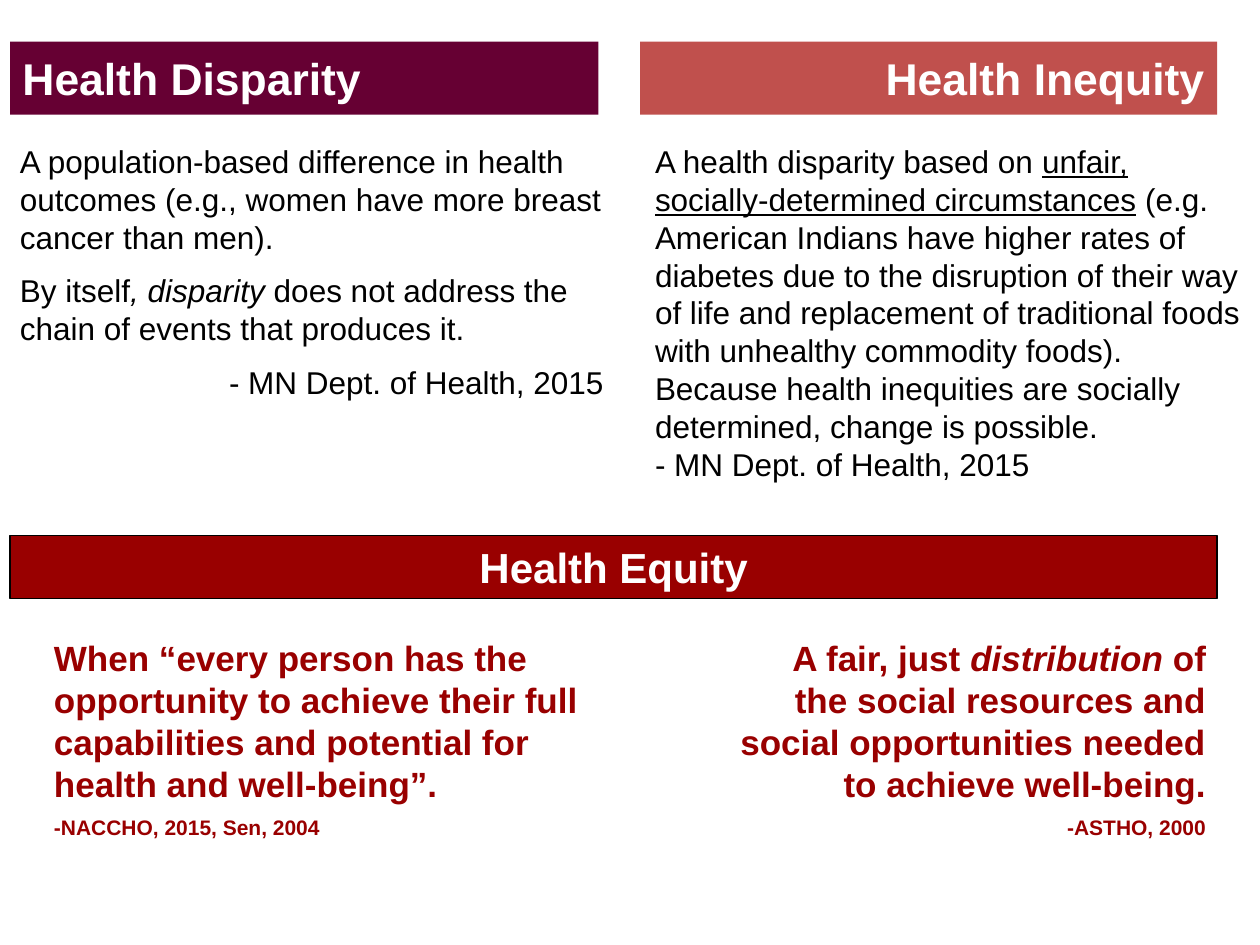
"""Build a slide that defines health disparity, inequity and equity."""
import pptx
import pptx.dml.color
import pptx.enum.shapes
import pptx.enum.text
import pptx.util

Inches, Pt = pptx.util.Inches, pptx.util.Pt
RGB = pptx.dml.color.RGBColor.from_string
ANCHOR = pptx.enum.text.MSO_ANCHOR
ALIGN = {
    "left": pptx.enum.text.PP_ALIGN.LEFT,
    "center": pptx.enum.text.PP_ALIGN.CENTER,
    "right": pptx.enum.text.PP_ALIGN.RIGHT,
}
COLORS = {"plum": "660033", "coral": "C0504D", "red": "990000", "white": "FFFFFF", "black": "000000"}

BANNERS = [
    {"text": "Health Disparity", "box": (0.08, 0.33, 4.67, 0.58), "fill": "plum",
     "align": "left", "size": 25.4, "anchor": ANCHOR.MIDDLE, "line": None},
    {"text": "Health Inequity", "box": (5.08, 0.33, 4.58, 0.58), "fill": "coral",
     "align": "right", "size": 25.4, "anchor": ANCHOR.MIDDLE, "line": None},
    {"text": "Health Equity", "box": (0.08, 4.25, 9.58, 0.5), "fill": "red",
     "align": "center", "size": 24, "anchor": ANCHOR.TOP, "line": "black"},
]

BODY = {"size": 18, "bold": False, "color": "black"}
QUOTE = {"size": 20, "bold": True, "color": "red"}
SOURCE = {**QUOTE, "size": 12}
ITALIC = {"italic": True}
UNDERLINE = {"underline": True}

PASSAGES = [
    ((0.06, 1.08, 4.83, 2.68), [
        ("left", 0, BODY, [("A population-based difference in health outcomes "
                            "(e.g., women have more breast cancer than men).", {})]),
        ("left", 9, BODY, [("By itself", {}), (", disparity ", ITALIC),
                           ("does not address the chain of events that produces it.", {})]),
        ("right", 9, BODY, [("- MN Dept. of Health, 2015", {})]),
    ]),
    ((5.1, 1.08, 4.92, 2.83), [
        ("left", 0, BODY, [("A health disparity based on ", {}),
                           ("unfair, socially-determined circumstances", UNDERLINE),
                           (" (e.g. American Indians have higher rates of diabetes due to the "
                            "disruption of their way of life and replacement of traditional foods "
                            "with unhealthy commodity foods). Because health inequities are "
                            "socially determined, change is possible.", {})]),
        ("left", 0, BODY, [("- MN Dept. of Health, 2015", {})]),
    ]),
    ((0.33, 5, 4.67, 1.73), [
        ("left", 0, QUOTE, [("When “every person has the opportunity to achieve their full "
                             "capabilities and potential for health and well-being”.", {})]),
        ("left", 6, SOURCE, [("-NACCHO, 2015, Sen, 2004", {})]),
    ]),
    ((5.73, 5, 3.94, 1.75), [
        ("right", 0, QUOTE, [("A fair, just ", {}), ("distribution", ITALIC),
                             (" of the social resources and social opportunities needed "
                              "to achieve well-being.", {})]),
        ("right", 6, SOURCE, [("-ASTHO, 2000", {})]),
    ]),
]


def add_run(p, text, size, color, **style):
    r = p.add_run()
    r.text = text
    r.font.color.rgb = RGB(COLORS[color])
    for name, value in {"name": "Arial", "size": Pt(size), **style}.items():
        setattr(r.font, name, value)


def add_banner(s, banner):
    sp = s.shapes.add_shape(pptx.enum.shapes.MSO_SHAPE.RECTANGLE, *map(Inches, banner["box"]))
    sp.shadow.inherit = False
    sp.fill.solid()
    sp.fill.fore_color.rgb = RGB(COLORS[banner["fill"]])
    if banner["line"]:
        sp.line.color.rgb = RGB(COLORS[banner["line"]])
        sp.line.width = Pt(0.75)
    else:
        sp.line.fill.background()
    tf = sp.text_frame
    tf.word_wrap = True
    tf.vertical_anchor = banner["anchor"]
    p = tf.paragraphs[0]
    p.alignment = ALIGN[banner["align"]]
    add_run(p, banner["text"], banner["size"], "white", bold=True)


def add_passage(s, box, paragraphs):
    tf = s.shapes.add_textbox(*map(Inches, box)).text_frame
    tf.word_wrap = True
    for i, (align, space, style, runs) in enumerate(paragraphs):
        p = tf.add_paragraph() if i else tf.paragraphs[0]
        p.alignment = ALIGN[align]
        p.space_before = Pt(space)
        for text, emphasis in runs:
            add_run(p, text, **style, **emphasis)


def main():
    prs = pptx.Presentation()
    prs.slide_width, prs.slide_height = Inches(10), Inches(7.5)
    s = prs.slides.add_slide(prs.slide_layouts[6])
    for banner in BANNERS:
        add_banner(s, banner)
    for box, paragraphs in PASSAGES:
        add_passage(s, box, paragraphs)
    prs.save("out.pptx")


if __name__ == "__main__":
    main()
